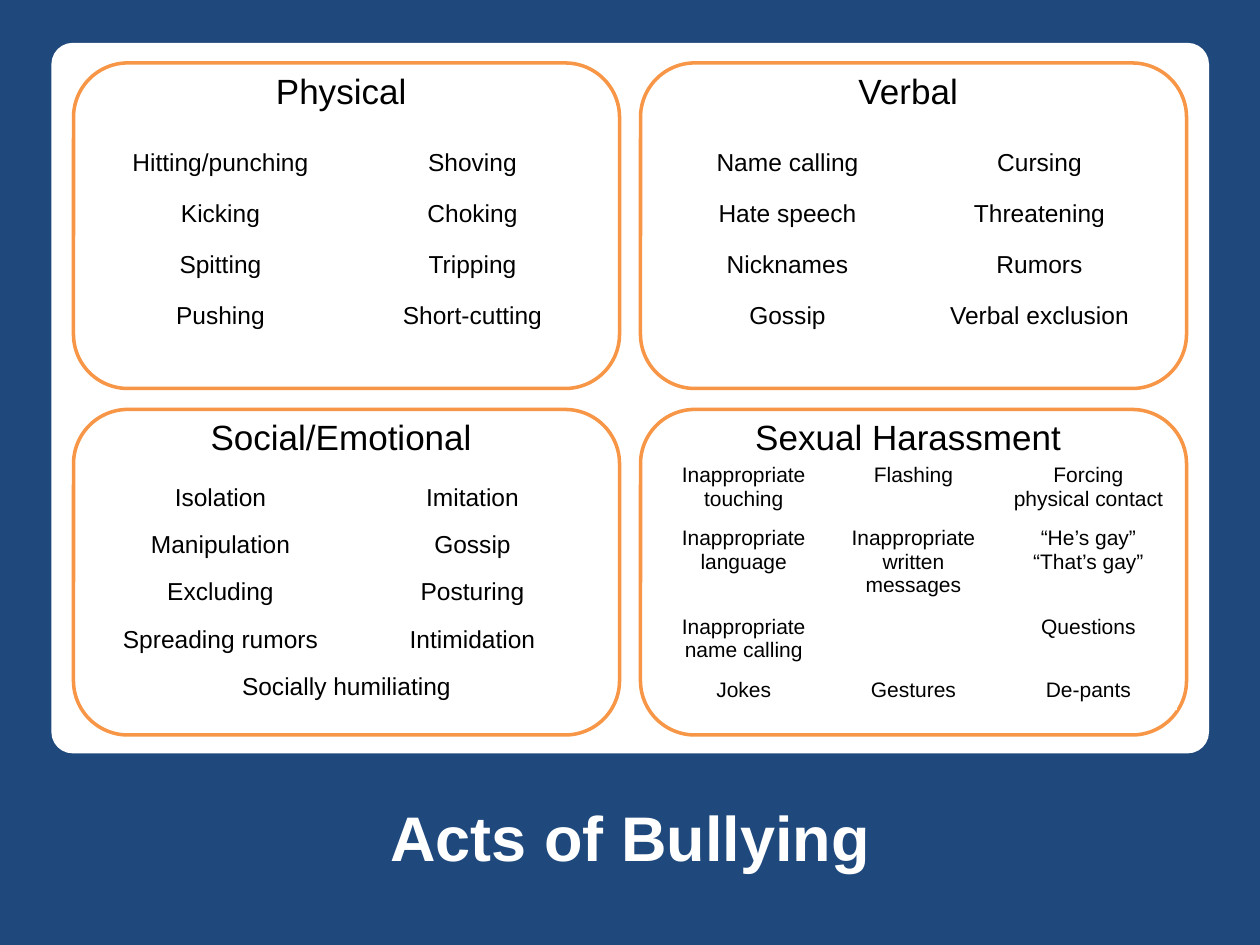
from pptx import Presentation
from pptx.dml.color import RGBColor
from pptx.enum.shapes import MSO_SHAPE
from pptx.enum.text import MSO_ANCHOR, PP_ALIGN
from pptx.util import Pt

ROUND = MSO_SHAPE.ROUNDED_RECTANGLE
TOP = MSO_ANCHOR.TOP
CENTER = PP_ALIGN.CENTER

THEME = {
    "font": "Arial",
    "back": RGBColor(0x1F, 0x49, 0x7D),
    "white": RGBColor(0xFF, 0xFF, 0xFF),
    "edge": RGBColor(0xF7, 0x96, 0x46),
    "ink": RGBColor(0, 0, 0),
    "title": 36,
    "head": 20,
    "body": 14,
    "small": 12,
}

TITLE = "Acts of Bullying"
CARDS = [
    {"head": "Physical", "drop": 45.4, "cols": [144, 144], "rows": [29.2] * 4,
     "size": "body", "cells": [
         ["Hitting/punching", "Shoving"],
         ["Kicking", "Choking"],
         ["Spitting", "Tripping"],
         ["Pushing", "Short-cutting"]]},
    {"head": "Verbal", "drop": 45.4, "cols": [144, 144], "rows": [29.2] * 4,
     "size": "body", "cells": [
         ["Name calling", "Cursing"],
         ["Hate speech", "Threatening"],
         ["Nicknames", "Rumors"],
         ["Gossip", "Verbal exclusion"]]},
    {"head": "Social/Emotional", "drop": 39, "cols": [144, 144], "rows": [27] * 5,
     "size": "body", "cells": [
         ["Isolation", "Imitation"],
         ["Manipulation", "Gossip"],
         ["Excluding", "Posturing"],
         ["Spreading rumors", "Intimidation"],
         ["Socially humiliating"]]},
    {"head": "Sexual Harassment", "drop": 27.4, "cols": [94, 100, 100],
     "rows": [36, 50.4, 36, 21.6], "size": "small", "cells": [
         ["Inappropriate touching", "Flashing", "Forcing physical contact"],
         ["Inappropriate language", "Inappropriate written messages",
          "“He’s gay” “That’s gay”"],
         ["Inappropriate name calling", "", "Questions"],
         ["Jokes", "Gestures", "De-pants"]]},
]

LEFT, UPPER = 42, 36
WIDE, HIGH = 312, 186
STEP_X, STEP_Y = 324, 198


def write(frame, text, size="body", color="ink", bold=False):
    """Put one centred paragraph into a text frame."""
    frame.word_wrap = True
    para = frame.paragraphs[0]
    para.alignment = CENTER
    run = para.add_run()
    run.text = text
    font = run.font
    font.name = THEME["font"]
    font.size = Pt(THEME[size])
    font.bold = bold
    font.color.rgb = THEME[color]


def add_panel(slide, x, y, w, h, edge=None, round_by=None):
    """Draw a white rounded panel."""
    panel = slide.shapes.add_shape(ROUND, Pt(x), Pt(y), Pt(w), Pt(h))
    panel.shadow.inherit = False
    panel.fill.solid()
    panel.fill.fore_color.rgb = THEME["white"]
    if edge:
        panel.line.color.rgb = THEME[edge]
        panel.line.width = Pt(2)
    else:
        panel.line.fill.background()
    if round_by is not None:
        panel.adjustments[0] = round_by


def add_text(slide, x, y, w, h, text, inset=None, **form):
    """Add a text box, with an optional equal inset."""
    frame = slide.shapes.add_textbox(Pt(x), Pt(y), Pt(w), Pt(h)).text_frame
    frame.vertical_anchor = TOP
    if inset is not None:
        frame.margin_left = frame.margin_right = Pt(inset)
        frame.margin_top = frame.margin_bottom = Pt(inset)
    write(frame, text, **form)


def add_grid(slide, x, y, card):
    """Add a plain table, where a short row spans every column."""
    cols, rows = card["cols"], card["rows"]
    grid = slide.shapes.add_table(
        len(rows), len(cols), Pt(x), Pt(y), Pt(sum(cols)), Pt(sum(rows))).table
    grid.first_row = grid.horz_banding = False
    for col, width in zip(grid.columns, cols):
        col.width = Pt(width)
    for row, height in zip(grid.rows, rows):
        row.height = Pt(height)
    for cell in grid.iter_cells():
        cell.fill.background()
        cell.vertical_anchor = TOP
    for r, words in enumerate(card["cells"]):
        if len(words) < len(cols):
            grid.cell(r, 0).merge(grid.cell(r, len(cols) - 1))
        for c, word in enumerate(words):
            write(grid.cell(r, c).text_frame, word, size=card["size"])


def main():
    """Build and save the slide."""
    deck = Presentation()
    deck.slide_width, deck.slide_height = Pt(720), Pt(540)
    slide = deck.slides.add_slide(deck.slide_layouts[6])
    slide.background.fill.solid()
    slide.background.fill.fore_color.rgb = THEME["back"]
    add_panel(slide, 29.4, 24.5, 661.5, 406, round_by=0.03)
    add_text(slide, 29.4, 449.3, 661.5, 68.4, TITLE, inset=7.2,
             size="title", color="white", bold=True)
    for i, card in enumerate(CARDS):
        x = LEFT + i % 2 * STEP_X
        y = UPPER + i // 2 * STEP_Y
        add_panel(slide, x, y, WIDE, HIGH, edge="edge")
        add_text(slide, x + 24, y, 258, 31.5, card["head"], size="head")
        add_grid(slide, x + 12, y + card["drop"], card)
    deck.save("out.pptx")


if __name__ == "__main__":
    main()
